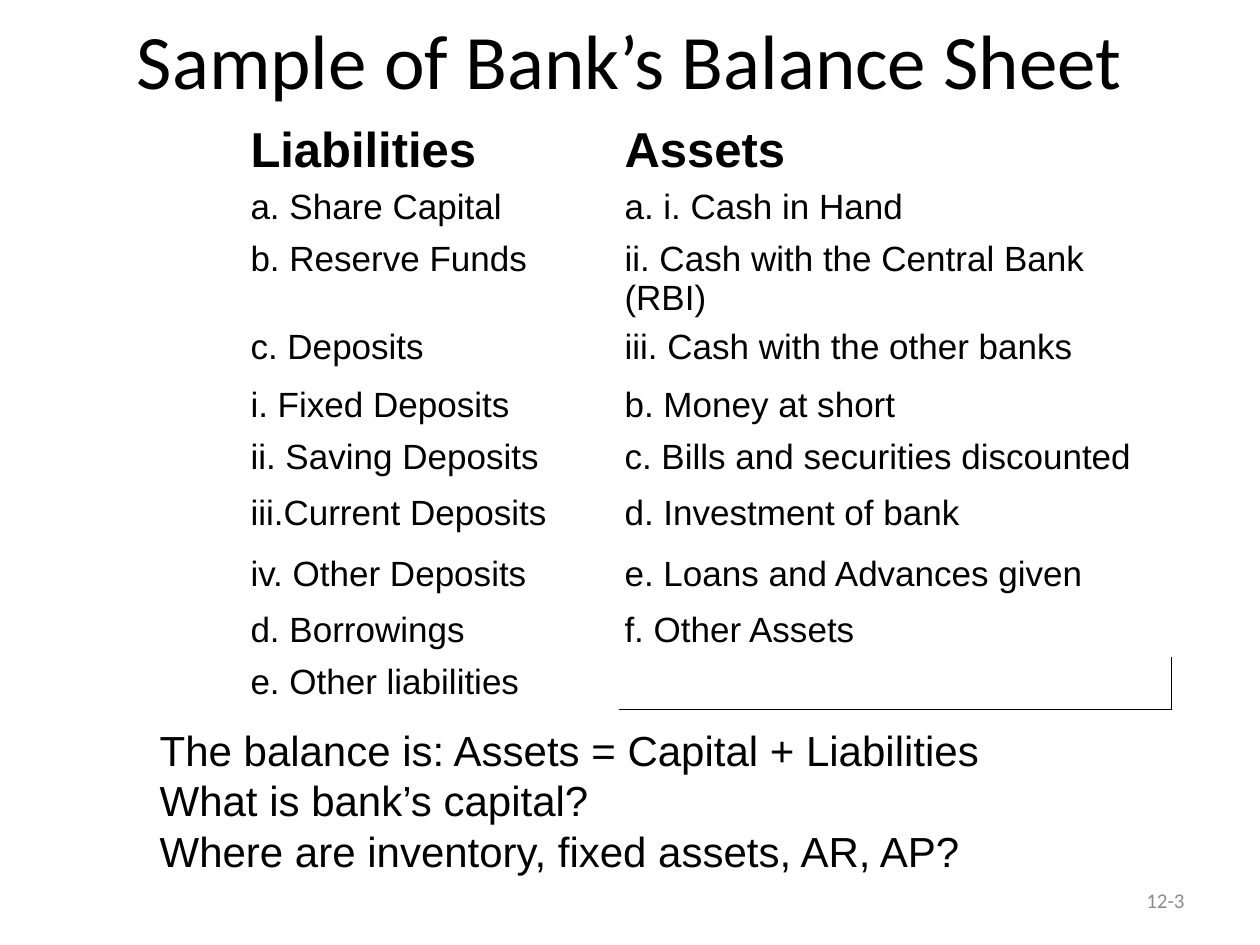
import pptx
import pptx.util
import pptx.dml.color
import pptx.enum.text
import pptx.oxml
import pptx.oxml.ns
from dataclasses import dataclass

Cm = pptx.util.Cm
Pt = pptx.util.Pt
Align = pptx.enum.text.PP_ALIGN
Anchor = pptx.enum.text.MSO_ANCHOR
BLACK = pptx.dml.color.RGBColor(0x00, 0x00, 0x00)
GREY = pptx.dml.color.RGBColor(0x8C, 0x8C, 0x8C)


@dataclass(frozen=True)
class Box:
    left: float
    top: float
    width: float
    height: float

    def lengths(self) -> list:
        return [Cm(n) for n in (self.left, self.top, self.width, self.height)]


@dataclass(frozen=True)
class Entry:
    liability: str
    asset: str
    height: float
    size: int = 20
    bold: bool = False


ENTRIES = [
    Entry("Liabilities", "Assets", 1.04, 28, True),
    Entry("a. Share Capital", "a. i. Cash in Hand", 1.04),
    Entry("b. Reserve Funds", "ii. Cash with the Central Bank (RBI)", 1.09),
    Entry("c. Deposits", "iii. Cash with the other banks", 1.17),
    Entry("i. Fixed Deposits", "b. Money at short", 1.04),
    Entry("ii. Saving Deposits", "c. Bills and securities discounted", 1.14),
    Entry("iii.Current Deposits", "d. Investment of bank", 1.22),
    Entry("iv. Other Deposits", "e. Loans and Advances given", 1.14),
    Entry("d. Borrowings", "f. Other Assets", 1.04),
    Entry("e. Other liabilities", "", 1.04),
]
COLUMN_WIDTHS = (7.54, 11.13)
REMARKS = (
    "The balance is: Assets = Capital + Liabilities",
    "What is bank’s capital?",
    "Where are inventory, fixed assets, AR, AP?",
)


def apply_format(target, values: dict) -> None:
    for attribute, value in values.items():
        setattr(target, attribute, value)


def write(frame, lines, size: int, face: str = "Arial", color=BLACK,
          bold: bool = False, align=Align.LEFT) -> None:
    frame.text = "\n".join(lines)
    for paragraph in frame.paragraphs:
        paragraph.alignment = align
        for font in [paragraph.font] + [run.font for run in paragraph.runs]:
            apply_format(font, {"size": Pt(size), "name": face, "bold": bold})
            font.color.rgb = color


def add_text(slide, box: Box, lines, anchor=Anchor.TOP, **style) -> None:
    frame = slide.shapes.add_textbox(*box.lengths()).text_frame
    apply_format(frame, {"word_wrap": True, "vertical_anchor": anchor})
    write(frame, lines, **style)


def outline(cell, sides) -> None:
    properties = cell._tc.get_or_add_tcPr()
    for position, side in enumerate(sides):
        border = pptx.oxml.parse_xml(
            f'<a:{side} {pptx.oxml.ns.nsdecls("a")} w="9525"><a:solidFill>'
            f'<a:srgbClr val="{BLACK}"/></a:solidFill></a:{side}>')
        properties.insert(position, border)


def add_balance_sheet(slide, box: Box) -> None:
    sheet = slide.shapes.add_table(
        len(ENTRIES), len(COLUMN_WIDTHS), *box.lengths()).table
    apply_format(sheet, {"first_row": False, "horz_banding": False})
    for column, width in zip(sheet.columns, COLUMN_WIDTHS):
        column.width = Cm(width)
    margins = {f"margin_{side}": Cm(0.1)
               for side in ("left", "right", "top", "bottom")}
    for row, entry in zip(sheet.rows, ENTRIES):
        row.height = Cm(entry.height)
        for cell, wording in zip(row.cells, (entry.liability, entry.asset)):
            apply_format(cell, margins)
            cell.fill.background()
            write(cell.text_frame, [wording], entry.size, bold=entry.bold)
    outline(sheet.cell(len(ENTRIES) - 1, 1), ("lnR", "lnB"))


def main() -> None:
    deck = pptx.Presentation()
    apply_format(deck, {"slide_width": Cm(25.4), "slide_height": Cm(19.05)})
    slide = deck.slides.add_slide(deck.slide_layouts[5])

    heading = slide.shapes.title
    place = Box(1.27, -0.4, 22.86, 3.18).lengths()
    apply_format(heading, dict(zip(("left", "top", "width", "height"), place)))
    heading.text_frame.vertical_anchor = Anchor.MIDDLE
    write(heading.text_frame, ["Sample of Bank’s Balance Sheet"], 44,
          "Calibri", align=Align.CENTER)

    add_balance_sheet(slide, Box(4.95, 2.39, sum(COLUMN_WIDTHS),
                                 sum(entry.height for entry in ENTRIES)))
    add_text(slide, Box(18.2, 17.65, 5.93, 1.01), ["12-3"], Anchor.MIDDLE,
             size=12, face="Calibri", color=GREY, align=Align.RIGHT)
    add_text(slide, Box(2.97, 14.48, 20.45, 3.33), REMARKS, size=24)
    deck.save("out.pptx")


if __name__ == "__main__":
    main()
